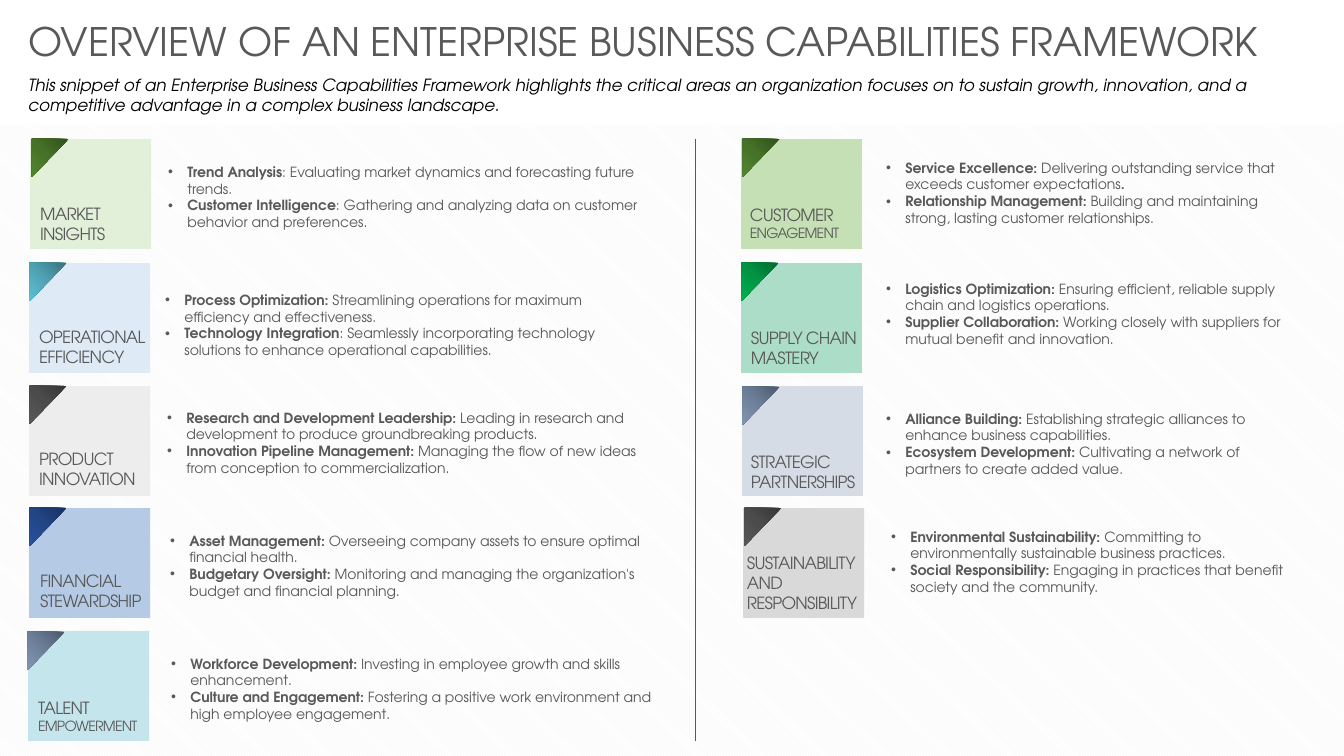
import copy
import pptx
import pptx.util
import pptx.dml.color
import pptx.enum.dml
import pptx.enum.shapes
import pptx.enum.text
import lxml.etree
import pptx.oxml.ns

RGB = pptx.dml.color.RGBColor
Pt = pptx.util.Pt
KIND = pptx.enum.shapes.MSO_SHAPE
qn = pptx.oxml.ns.qn
PX = 9144  # 100 px to the inch
FONT = "TeX Gyre Adventor"

WHITE = RGB(0xFF, 0xFF, 0xFF)
BLACK = RGB(0, 0, 0)
PALE = RGB(0xF2, 0xF2, 0xF2)
GRAY = RGB(0x59, 0x59, 0x59)
GREEN = RGB(0x53, 0x87, 0x30)
TEAL = RGB(0x5E, 0xC0, 0xD4)
NAVY = RGB(0x28, 0x52, 0x9E)
SLATE = RGB(0x81, 0x96, 0xB4)
JADE = RGB(0x00, 0xB0, 0x50)
MINT = RGB(0xE2, 0xF0, 0xD9)
SKY = RGB(0xDE, 0xEB, 0xF7)
SMOKE = RGB(0xED, 0xED, 0xED)
BLUE = RGB(0xB5, 0xCB, 0xE5)
AQUA = RGB(0xC5, 0xE5, 0xED)
LEAF = RGB(0xC5, 0xE0, 0xB4)
SEA = RGB(0xAB, 0xDD, 0xC9)
MIST = RGB(0xD6, 0xDC, 0xE5)
SILVER = RGB(0xD9, 0xD9, 0xD9)


def text(home, box, *lines, sizes=(12, 12), color=GRAY, bold=(False, False),
         italic=False, space=0, bullet=False):
    """Add a text box; parts split by | take the two formats in turn."""
    frame = home.add_textbox(*[n * PX for n in box]).text_frame
    frame.word_wrap = True
    frame.auto_size = pptx.enum.text.MSO_AUTO_SIZE.SHAPE_TO_FIT_TEXT
    for i, line in enumerate(lines):
        para = frame.paragraphs[0] if i == 0 else frame.add_paragraph()
        if bullet:
            props = para._p.get_or_add_pPr()
            props.set("marL", str(19 * PX))
            props.set("indent", str(-19 * PX))
            lxml.etree.SubElement(props, qn("a:buFont")).set("typeface", "Arial")
            lxml.etree.SubElement(props, qn("a:buChar")).set("char", "•")
        for j, part in enumerate(line.split("|")):
            run = para.add_run()
            run.text = part
            run.font.name = FONT
            run.font.size = Pt(sizes[j % 2])
            run.font.bold = bold[j % 2]
            run.font.italic = italic
            run.font.color.rgb = color
            if space:
                run._r.get_or_add_rPr().set("spc", str(space))


def block(home, kind, box):
    item = home.add_shape(kind, *[n * PX for n in box])
    item.shadow.inherit = False
    item.line.fill.background()
    return item


deck = pptx.Presentation()
deck.slide_width = 1333 * PX
deck.slide_height = 750 * PX
slide = deck.slides.add_slide(deck.slide_layouts[6])
shapes = slide.shapes

back = block(shapes, KIND.RECTANGLE, (0, 124, 1333, 626))
back.fill.patterned()
back.fill.pattern = pptx.enum.dml.MSO_PATTERN.DARK_DOWNWARD_DIAGONAL
back.fill.fore_color.rgb = PALE
back.fill.back_color.rgb = WHITE

text(shapes, (18, 12, 1295, 57),
     "OVERVIEW OF AN ENTERPRISE BUSINESS CAPABILITIES FRAMEWORK", sizes=(28, 28))
text(shapes, (18, 69, 1292, 50),
     "This snippet of an Enterprise Business Capabilities Framework highlights "
     "the critical areas an organization focuses on to sustain growth, innovation, "
     "and a competitive advantage in a complex business landscape.",
     color=BLACK, italic=True)

# tile corner, tile colour, fold corner, fold colour, label box, label, notes corner, notes
areas = [
    ((30, 138), MINT, (31, 138), GREEN, (30, 197, 120, 50), "MARKET INSIGHTS", (157, 157),
     "Trend Analysis|: Evaluating market dynamics and forecasting future trends.",
     "Customer Intelligence|: Gathering and analyzing data on customer behavior and preferences."),
    ((29, 261), SKY, (29, 261), TEAL, (29, 319, 127, 50), "OPERATIONAL EFFICIENCY", (154, 284),
     "Process Optimization: |Streamlining operations for maximum efficiency and effectiveness.",
     "Technology Integration|: Seamlessly incorporating technology solutions to enhance "
     "operational capabilities."),
    ((29, 383), SMOKE, (29, 383), GRAY, (29, 440, 120, 50), "PRODUCT INNOVATION", (156, 401),
     "Research and Development Leadership: |Leading in research and development to produce "
     "groundbreaking products.",
     "Innovation Pipeline Management: |Managing the flow of new ideas from conception to "
     "commercialization."),
    ((29, 504), BLUE, (29, 504), NAVY, (30, 561, 127, 50), "FINANCIAL STEWARDSHIP", (159, 523),
     "Asset Management: |Overseeing company assets to ensure optimal financial health.",
     "Budgetary Oversight: |Monitoring and managing the organization's budget and "
     "financial planning."),
    ((28, 626), AQUA, (27, 627), SLATE, (28, 687, 120, 47), "TALENT |EMPOWERMENT", (160, 645),
     "Workforce Development:| Investing in employee growth and skills enhancement.",
     "Culture and Engagement: |Fostering a positive work environment and high "
     "employee engagement."),
    ((735, 138), LEAF, (736, 138), GREEN, (734, 198, 120, 47), "CUSTOMER |ENGAGEMENT", (869, 153),
     "Service Excellence: |Delivering outstanding service that exceeds customer expectations|.",
     "Relationship Management: |Building and maintaining strong, lasting customer relationships."),
    ((735, 261), SEA, (735, 261), JADE, (735, 320, 127, 50), "SUPPLY CHAIN MASTERY", (869, 273),
     "Logistics Optimization: |Ensuring efficient, reliable supply chain and logistics operations.",
     "Supplier Collaboration: |Working closely with suppliers for mutual benefit and innovation."),
    ((736, 383), MIST, (736, 384), SLATE, (735, 443, 127, 50), "STRATEGIC PARTNERSHIPS", (869, 402),
     "Alliance Building: |Establishing strategic alliances to enhance business capabilities.",
     "Ecosystem Development: |Cultivating a network of partners to create added value."),
    ((737, 504), SILVER, (738, 504), GRAY, (731, 543, 134, 71),
     "SUSTAINABILITY AND RESPONSIBILITY", (874, 519),
     "Environmental Sustainability: |Committing to environmentally sustainable business practices.",
     "Social Responsibility: |Engaging in practices that benefit society and the community."),
]
for spot, tint, nook, hue, box, label, start, *notes in areas:
    group = shapes.add_group_shape().shapes
    tile = block(group, KIND.RECTANGLE, (*spot, 120, 109))
    tile.fill.solid()
    tile.fill.fore_color.rgb = tint

    fold = block(group, KIND.RIGHT_TRIANGLE, (*nook, 38, 37))
    fold.rotation = 90
    fold.fill.gradient()
    fold.fill.gradient_angle = 315
    first = fold.fill.gradient_stops[0]._gs
    first.addnext(copy.deepcopy(first))
    shades = [(0, 0.59), (0.5, 0.84), (1, 1)]
    for stop, (place, shade) in zip(fold.fill.gradient_stops, shades):
        stop.position = place
        stop.color.rgb = RGB(*[round(c * shade) for c in hue])

    text(group, box, label, sizes=(12, 10), space=-50)
    wide = 497 if spot[0] < 690 else 419
    text(shapes, (*start, wide, 77), *notes, sizes=(10, 10), bold=(True, False), bullet=True)

rule = shapes.add_connector(pptx.enum.shapes.MSO_CONNECTOR.STRAIGHT,
                            690 * PX, 138 * PX, 690 * PX, 735 * PX)
rule.line.color.rgb = GRAY
rule.line.width = Pt(1)
lxml.etree.SubElement(rule._element.spPr, qn("a:effectLst"))

deck.save("out.pptx")
